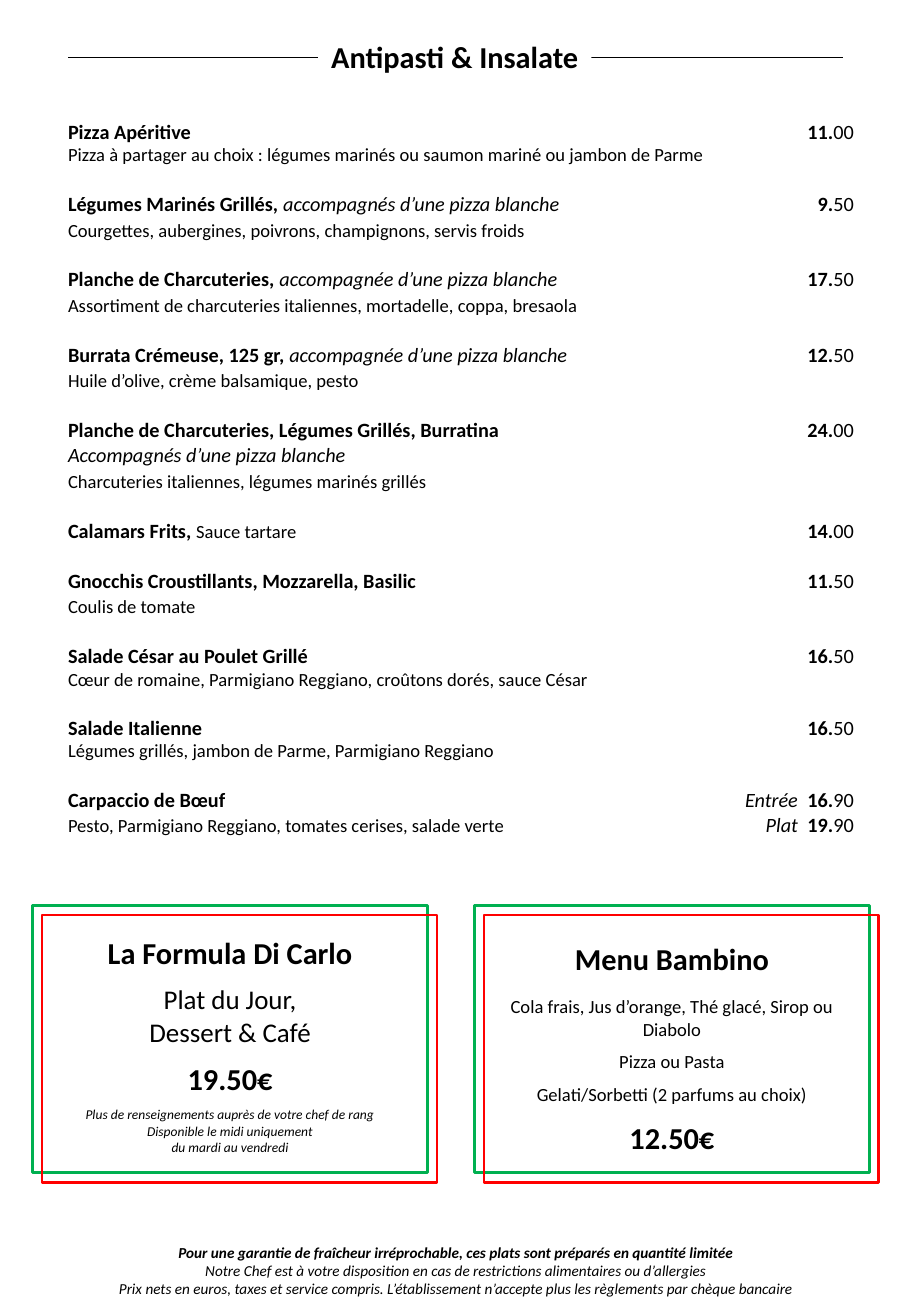
from lxml import etree
from pptx import Presentation
from pptx.dml.color import RGBColor
from pptx.enum.shapes import MSO_CONNECTOR, MSO_SHAPE
from pptx.enum.text import MSO_ANCHOR, PP_ALIGN
from pptx.oxml.ns import qn
from pptx.util import Inches, Pt

RECT = MSO_SHAPE.RECTANGLE
LINE = MSO_CONNECTOR.STRAIGHT
TOP, MID = MSO_ANCHOR.TOP, MSO_ANCHOR.MIDDLE
LEFT, MIDST = PP_ALIGN.LEFT, PP_ALIGN.CENTER

FONT = "Calibri"
BLACK, WHITE, GREEN, RED = "000000", "FFFFFF", "00B050", "FF0000"
STOPS = (80.13, 86.27)

BOLD = dict(size=12, bold=True)
SLANT = dict(size=12, italic=True)
PLAIN = dict(size=12)
NOTE = dict(size=11)
HEAD = dict(size=18, bold=True)
BIG = dict(size=16)
FINE = dict(size=8, italic=True)
FOOT = dict(size=9, italic=True)


def hue(code):
    return RGBColor.from_string(code)


def write(par, text, size=12, bold=False, italic=False, color=BLACK):
    run = par.add_run()
    run.text = text
    font = run.font
    font.name, font.size = FONT, Pt(size)
    font.bold, font.italic = bold, italic
    font.color.rgb = hue(color)


def price(value, label=""):
    whole, cents = value.split(".")
    start = [("\t" + label, SLANT)] if label else []
    return start + [("\t" + whole + ".", BOLD), (cents, PLAIN)]


class Menu:
    """Draws menu parts on a grid of 100 columns by 100 rows."""

    def __init__(self, wide, high):
        self.deck = Presentation()
        self.deck.slide_width = Inches(wide)
        self.deck.slide_height = Inches(high)
        self.col, self.row = Inches(wide) / 100, Inches(high) / 100
        self.slide = self.deck.slides.add_slide(self.deck.slide_layouts[6])

    def place(self, x, y, w, h):
        return (round(x * self.col), round(y * self.row),
                round(w * self.col), round(h * self.row))

    def rule(self, x, y, end):
        a, b, c, d = self.place(x, y, end, y)
        line = self.slide.shapes.add_connector(LINE, a, b, c, d)
        line.line.color.rgb = hue(BLACK)
        line.line.width = Pt(0.5)
        etree.SubElement(line._element.spPr, qn("a:effectLst"))

    def box(self, x, y, w, h, fill=None, edge=None):
        box = self.slide.shapes.add_shape(RECT, *self.place(x, y, w, h))
        box.shadow.inherit = False
        if fill:
            box.fill.solid()
            box.fill.fore_color.rgb = hue(fill)
        else:
            box.fill.background()
        if edge:
            box.line.color.rgb = hue(edge)
            box.line.width = Pt(1.5)
        else:
            box.line.fill.background()
        return box.text_frame

    def text(self, x, y, w, h):
        return self.slide.shapes.add_textbox(*self.place(x, y, w, h)).text_frame

    def stops(self, par, spots):
        tabs = etree.SubElement(par._p.get_or_add_pPr(), qn("a:tabLst"))
        for spot in spots:
            pos = str(round(spot * self.col))
            etree.SubElement(tabs, qn("a:tab"), pos=pos, algn="r")

    def fill(self, frame, rows, align=MIDST, anchor=TOP, wrap=True):
        frame.word_wrap = wrap
        frame.vertical_anchor = anchor
        for i, (gap, lead, runs) in enumerate(rows):
            par = frame.add_paragraph() if i else frame.paragraphs[0]
            count = sum(text.count("\t") for text, _ in runs)
            if count:
                self.stops(par, STOPS[-count:])
            par.alignment = align
            if lead:
                par.line_spacing = Pt(lead)
            if i and gap:
                par.space_before = Pt(gap)
            for text, style in runs:
                write(par, text, **style)

    def card(self, x, y, inset, rows):
        w, h = 43.33, 20.31
        frame = self.box(x, y, w, h, edge=GREEN)
        frame.margin_top = round(inset * self.row)
        self.fill(frame, rows)
        self.box(x + 1.03, y + 0.74, w, h, edge=RED)


BREAD = "accompagnée d’une pizza blanche"
DISHES = [
    ("Pizza Apéritive", None, price("11.00"), None, None,
     [[("Pizza à partager au choix : légumes marinés ou saumon mariné "
        "ou jambon de Parme", NOTE)]]),
    ("Légumes Marinés Grillés, ", ("accompagnés d’une pizza blanche", SLANT),
     price("9.50"), 15, 15,
     [[("Courgettes, aubergines, poivrons, champignons, servis froids", NOTE)]]),
    ("Planche de Charcuteries, ", (BREAD, SLANT), price("17.50"), 15, 15,
     [[("Assortiment de charcuteries italiennes, mortadelle, coppa, bresaola",
        NOTE)]]),
    ("Burrata Crémeuse, 125 gr, ", (BREAD, SLANT), price("12.50"), 15, 15,
     [[("Huile d’olive, crème balsamique, pesto", NOTE)]]),
    ("Planche de Charcuteries, Légumes Grillés, Burratina", None,
     price("24.00"), 15, 15,
     [[("Accompagnés d’une pizza blanche", SLANT)],
      [("Charcuteries italiennes, légumes marinés grillés", NOTE)]]),
    ("Calamars Frits, ", ("Sauce tartare", NOTE), price("14.00"), 15, 15, []),
    ("Gnocchis Croustillants, Mozzarella, Basilic", None, price("11.50"), 15, 15,
     [[("Coulis de tomate", NOTE)]]),
    ("Salade César au Poulet Grillé", None, price("16.50"), 15, None,
     [[("Cœur de romaine, Parmigiano Reggiano, croûtons dorés, sauce César",
        NOTE)]]),
    ("Salade Italienne", None, price("16.50"), None, None,
     [[("Légumes grillés, jambon de Parme, Parmigiano Reggiano", NOTE)]]),
    ("Carpaccio de Bœuf", None, price("16.90", "Entrée"), 15, 15,
     [[("Pesto, Parmigiano Reggiano, tomates cerises, salade verte", NOTE)]
      + price("19.90", "Plat")]),
]

LUNCH = [
    (0, None, [("La Formula Di Carlo", HEAD)]),
    (7.3, None, [("Plat du Jour,", BIG)]),
    (0, None, [("Dessert & Café", BIG)]),
    (7.3, None, [("19.50€", HEAD)]),
    (6, None, [("Plus de renseignements auprès de votre chef de rang", FINE)]),
    (0, None, [("Disponible le midi uniquement", FINE)]),
    (0, None, [("du mardi au vendredi", FINE)]),
]

KIDS = [
    (0, None, [("Menu Bambino", HEAD)]),
    (11, None, [("Cola frais, Jus d’orange, Thé glacé, Sirop ou Diabolo", NOTE)]),
    (6.1, None, [("Pizza ou Pasta", NOTE)]),
    (6.1, None, [("Gelati/Sorbetti (2 parfums au choix)", NOTE)]),
    (8.5, None, [("12.50€", HEAD)]),
]

TERMS = [
    (0, None, [("Pour une garantie de fraîcheur irréprochable, ces plats sont "
                "préparés en quantité limitée", dict(FOOT, bold=True))]),
    (0, None, [("Notre Chef est à votre disposition en cas de restrictions "
                "alimentaires ou d’allergies", FOOT)]),
    (0, None, [("Prix nets en euros, taxes et service compris. L’établissement "
                "n’accepte plus les règlements par chèque bancaire", FOOT)]),
]


def main():
    menu = Menu(7.5, 10.83)
    rows = []
    for name, aside, cost, lead, under, notes in DISHES:
        extra = [aside] if aside else []
        rows.append((14.65, lead, [(name, BOLD)] + extra + cost))
        rows += [(0, under, note) for note in notes]
    frame = menu.text(7.47, 9.05, 88.4, 56.6)
    frame.margin_left = frame.margin_right = 0
    frame.margin_top = frame.margin_bottom = 0
    menu.fill(frame, rows, align=LEFT)

    menu.rule(7.47, 4.34, 92.53)
    title = menu.box(34.93, 2.4, 30, 3.69, fill=WHITE)
    menu.fill(title, [(0, None, [("Antipasti & Insalate", HEAD)])],
              anchor=MID, wrap=False)

    menu.fill(menu.text(0, 94, 100, 5.17), TERMS)
    for i, (inset, offer) in enumerate([(2.18, LUNCH), (2.65, KIDS)]):
        menu.card(3.6 + i * 48.5, 68.79, inset, offer)
    menu.deck.save("out.pptx")


if __name__ == "__main__":
    main()
